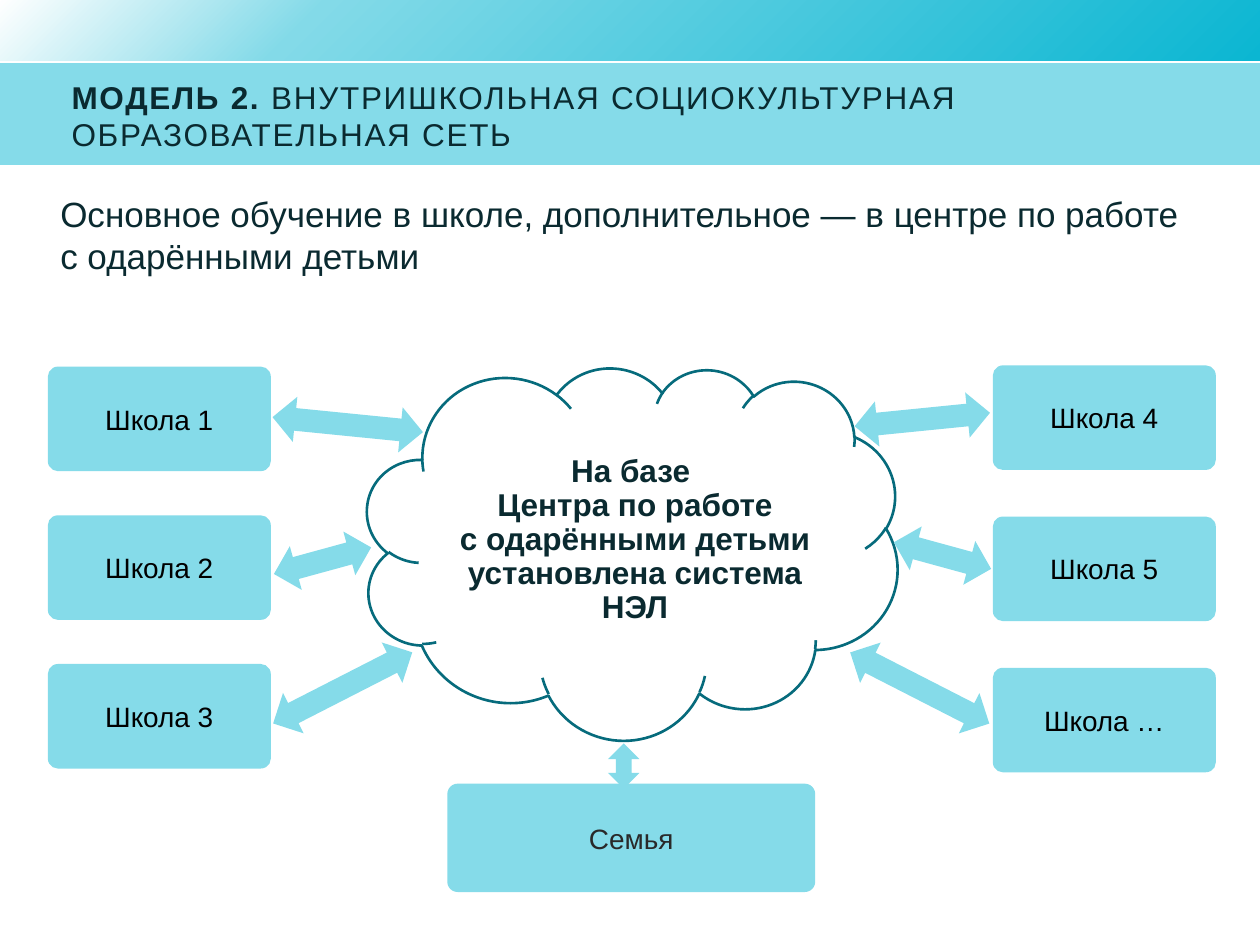
from lxml.etree import SubElement
from pptx import Presentation
from pptx.dml.color import RGBColor
from pptx.enum.shapes import MSO_SHAPE as Shape
from pptx.enum.text import MSO_ANCHOR as Anchor, PP_ALIGN as Align
from pptx.oxml.ns import qn
from pptx.util import Inches, Pt

AQUA, DARK, WHITE = "85DBE9", "0A2A30", "FFFFFF"


def color(value):
    """Turn a hex string into a colour."""
    return RGBColor.from_string(value)


def add_block(slide, kind, left, top, width, height, fill=AQUA):
    """Add a filled preset shape without outline or shadow."""
    block = slide.shapes.add_shape(
        kind, Inches(left), Inches(top), Inches(width), Inches(height))
    block.shadow.inherit = False
    block.fill.solid()
    block.fill.fore_color.rgb = color(fill)
    block.line.fill.background()
    return block


def write(shape, text, size, ink=DARK, align=Align.CENTER, anchor=Anchor.MIDDLE):
    """Put wrapped text in a shape, one paragraph per line, and return its frame."""
    frame = shape.text_frame
    frame.text = text
    frame.word_wrap = True
    frame.vertical_anchor = anchor
    for para in frame.paragraphs:
        para.alignment = align
        for span in para.runs:
            span.font.size = Pt(size)
            span.font.name = "Arial"
            span.font.color.rgb = color(ink)
    return frame


def add_text(slide, left, top, width, height, text, size, anchor):
    """Add a left-aligned text box and return its frame."""
    box = slide.shapes.add_textbox(
        Inches(left), Inches(top), Inches(width), Inches(height))
    return write(box, text, size, align=Align.LEFT, anchor=anchor)


def add_top_band(slide):
    """Add the strip whose gradient spreads from the lower right corner."""
    band = add_block(slide, Shape.RECTANGLE, 0, -0.02, 10, 0.5)
    band.fill.gradient()
    gradient = band.fill._xPr.find(qn("a:gradFill"))
    for child in list(gradient):
        gradient.remove(child)
    stops = SubElement(gradient, qn("a:gsLst"))
    for position, value in ((0, "0BB6D2"), (75, "83DAE8"), (100, WHITE)):
        stop = SubElement(stops, qn("a:gs"), pos=str(position * 1000))
        SubElement(stop, qn("a:srgbClr"), val=value)
    spread = SubElement(gradient, qn("a:path"), path="circle")
    SubElement(spread, qn("a:fillToRect"), l="100000", t="100000")


def add_title(slide):
    """Add the title with its bold opening and spaced letters."""
    add_block(slide, Shape.RECTANGLE, 0, 0.5, 10, 0.81)
    frame = add_text(slide, 0.47, 0.52, 9.53, 0.79, "МОДЕЛЬ 2. ", 18, Anchor.MIDDLE)
    para = frame.paragraphs[0]
    para.runs[0].font.bold = True
    rest = para.add_run()
    rest.text = "ВНУТРИШКОЛЬНАЯ СОЦИОКУЛЬТУРНАЯ ОБРАЗОВАТЕЛЬНАЯ СЕТЬ"
    rest.font.size = Pt(18)
    rest.font.name = "Arial"
    rest.font.color.rgb = color(DARK)
    for span in para.runs:
        span.font._element.set("spc", "100")


def add_card(slide, text, left, top, width=1.77, height=0.83, ink="000000"):
    """Add a rounded card with a centred label."""
    card = add_block(slide, Shape.ROUNDED_RECTANGLE, left, top, width, height)
    card.adjustments[0] = 0.096
    write(card, text, 16, ink)


def add_arrow(slide, center_x, center_y, length, angle=0, width=0.36):
    """Add a double-headed arrow turned about its centre."""
    arrow = add_block(slide, Shape.UP_DOWN_ARROW, center_x - width / 2,
                      center_y - length / 2, width, length)
    arrow.rotation = angle


def add_center(slide):
    """Add the text panel in the middle of the cloud."""
    panel = add_block(slide, Shape.RECTANGLE, 3.39, 3.49, 3.3, 1.59, WHITE)
    frame = write(panel, "На базе \nЦентра по работе с\u00a0одарёнными детьми "
                  "установлена система НЭЛ", 18)
    frame.margin_left = frame.margin_right = Inches(0.05)
    frame.margin_top = frame.margin_bottom = Inches(0.05)
    for para in frame.paragraphs:
        para.line_spacing = 0.9
        para.runs[0].font.bold = True


def main():
    """Build the slide and save it."""
    deck = Presentation()
    deck.slide_width, deck.slide_height = Inches(10), Inches(7.5)
    slide = deck.slides.add_slide(deck.slide_layouts[6])
    add_top_band(slide)
    add_title(slide)

    cloud = add_block(slide, Shape.CLOUD, 2.89, 2.86, 4.24, 3.01, WHITE)
    cloud.rotation = 7.4
    cloud.line.color.rgb = color("066B7C")
    cloud.line.width = Pt(1.5)

    for row, name in enumerate(("Школа 1", "Школа 2", "Школа 3")):
        add_card(slide, name, 0.38, 2.91 + 1.18 * row)
    for row, name in enumerate(("Школа 4", "Школа 5", "Школа …")):
        add_card(slide, name, 7.88, 2.9 + 1.2 * row)
    add_card(slide, "Семья", 3.55, 6.22, 2.92, 0.86, "292929")

    for center_x, center_y, length, angle in (
            (2.76, 3.37, 1.2, 275.7), (2.56, 4.45, 0.8, 254.7),
            (2.72, 5.46, 1.24, 62.9), (7.32, 3.33, 1.08, 84.3),
            (7.48, 4.41, 0.8, 105.3), (7.3, 5.46, 1.24, 297.1)):
        add_arrow(slide, center_x, center_y, length, angle)
    add_arrow(slide, 4.95, 6.08, 0.36, width=0.25)

    add_center(slide)
    add_text(slide, 0.38, 1.48, 9.62, 0.77, "Основное обучение в школе, дополнительное — "
             "в центре по работе с\u00a0одарёнными детьми", 20, Anchor.TOP)
    deck.save("out.pptx")


if __name__ == "__main__":
    main()
